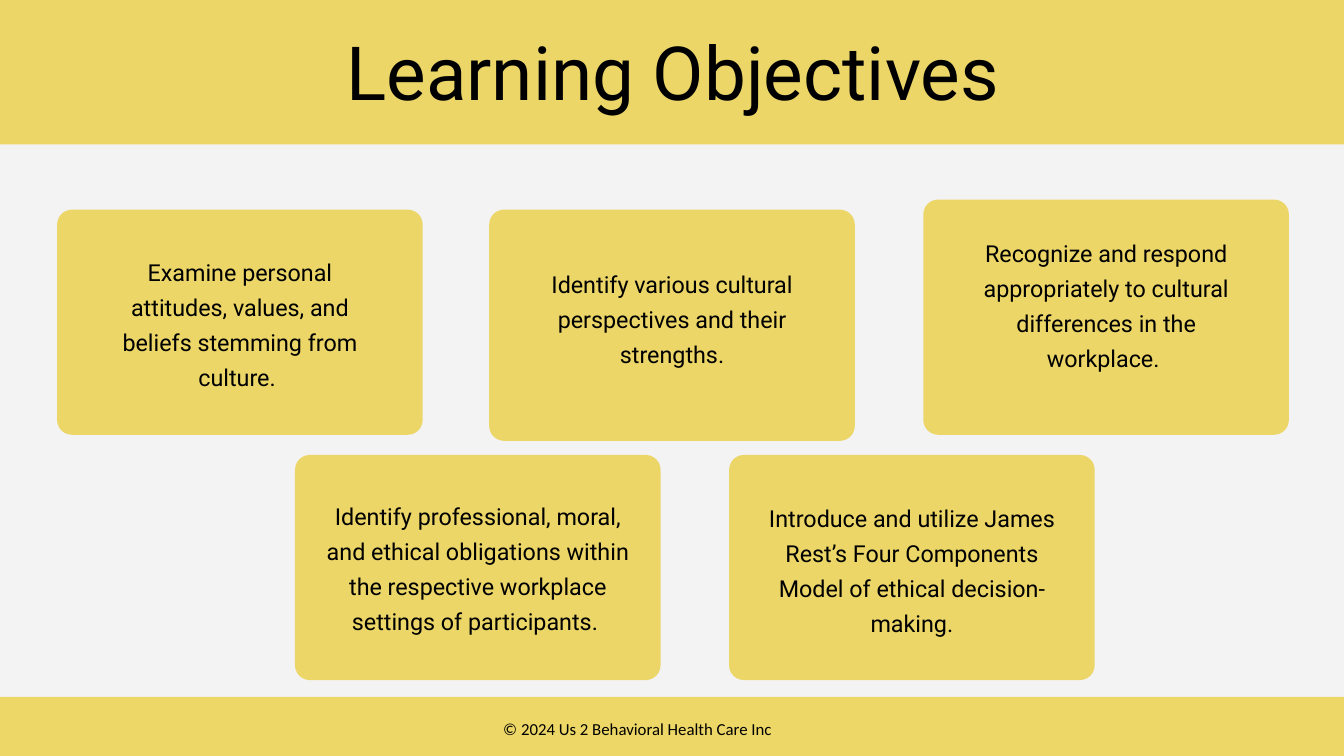
import pptx
import pptx.util
import pptx.dml.color
import pptx.enum.shapes
import pptx.enum.text

Inches = pptx.util.Inches
Pt = pptx.util.Pt
SHAPE = pptx.enum.shapes.MSO_SHAPE
ALIGN = pptx.enum.text.PP_ALIGN

YELLOW = pptx.dml.color.RGBColor(0xEC, 0xD6, 0x68)
FOOTER_YELLOW = pptx.dml.color.RGBColor(0xED, 0xD7, 0x67)
PALE_GREY = pptx.dml.color.RGBColor(0xF3, 0xF3, 0xF3)
BLACK = pptx.dml.color.RGBColor(0, 0, 0)

prs = pptx.Presentation()
prs.slide_width = Inches(20)
prs.slide_height = Inches(11.25)
s = prs.slides.add_slide(prs.slide_layouts[6])
s.background.fill.solid()
s.background.fill.fore_color.rgb = PALE_GREY


def add_block(kind, x, y, w, h, color):
    sp = s.shapes.add_shape(kind, Inches(x), Inches(y), Inches(w), Inches(h))
    sp.shadow.inherit = False
    sp.fill.solid()
    sp.fill.fore_color.rgb = color
    sp.line.fill.background()
    return sp


def add_text(text, x, y, w, h, size, font="Roboto", spacing=None):
    """Text with line spacing is centred and has no insets."""
    tf = s.shapes.add_textbox(Inches(x), Inches(y), Inches(w), Inches(h)).text_frame
    tf.word_wrap = True
    p = tf.paragraphs[0]
    if spacing:
        tf.margin_left = tf.margin_top = tf.margin_right = tf.margin_bottom = 0
        p.alignment = ALIGN.CENTER
        p.line_spacing = Pt(spacing)
    r = p.add_run()
    r.text = text
    r.font.size = Pt(size)
    r.font.name = font
    r.font.color.rgb = BLACK


# Title band
add_block(SHAPE.RECTANGLE, 0, 0, 20, 2.15, YELLOW)
add_text("Learning Objectives", 1.14, 0.39, 17.75, 1.34, 80, spacing=96)

# Objective cards: left, top, height, then text, its top and its width
CARD_W = 5.44
CORNER = 0.22
cards = [
    (7.28, 3.12, 3.44, "Identify various cultural perspectives and their strengths.",
     3.92, 4.21),
    (0.85, 3.12, 3.35, "Examine personal attitudes, values, and beliefs stemming "
     "from culture. ", 3.74, 4.21),
    (13.74, 2.97, 3.5, "Recognize and respond appropriately to cultural differences "
     "in the workplace. ", 3.46, 3.75),
    (4.39, 6.77, 3.35, "Identify professional, moral, and ethical obligations within "
     "the respective workplace settings of participants. ", 7.37, 4.8),
    (10.85, 6.77, 3.35, "Introduce and utilize James Rest’s Four Components Model of "
     "ethical decision-making.", 7.4, 4.64),
]
for x, y, h, text, text_y, text_w in cards:
    sp = add_block(SHAPE.ROUNDED_RECTANGLE, x, y, CARD_W, h, YELLOW)
    sp.adjustments[0] = CORNER / h
    text_x = x + (CARD_W - text_w) / 2
    add_text(text, text_x, text_y, text_w, 2.02, 25, spacing=37.5)

# Footer band
add_block(SHAPE.RECTANGLE, 0, 10.37, 20, 0.89, FOOTER_YELLOW)
add_text("© 2024 Us 2 Behavioral Health Care Inc", 7.39, 10.65, 4.75, 0.5, 18, "Calibri")

prs.save("out.pptx")
